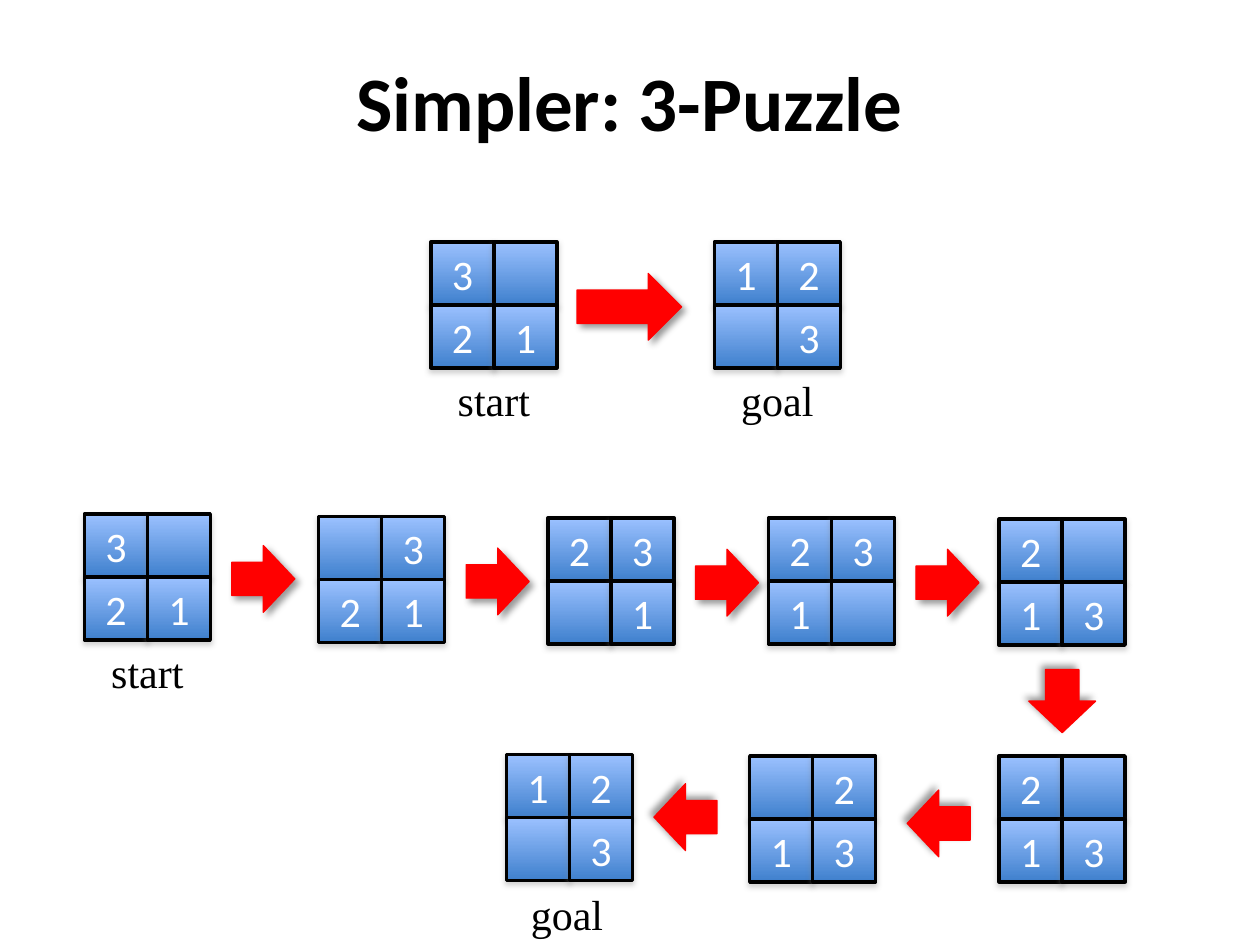
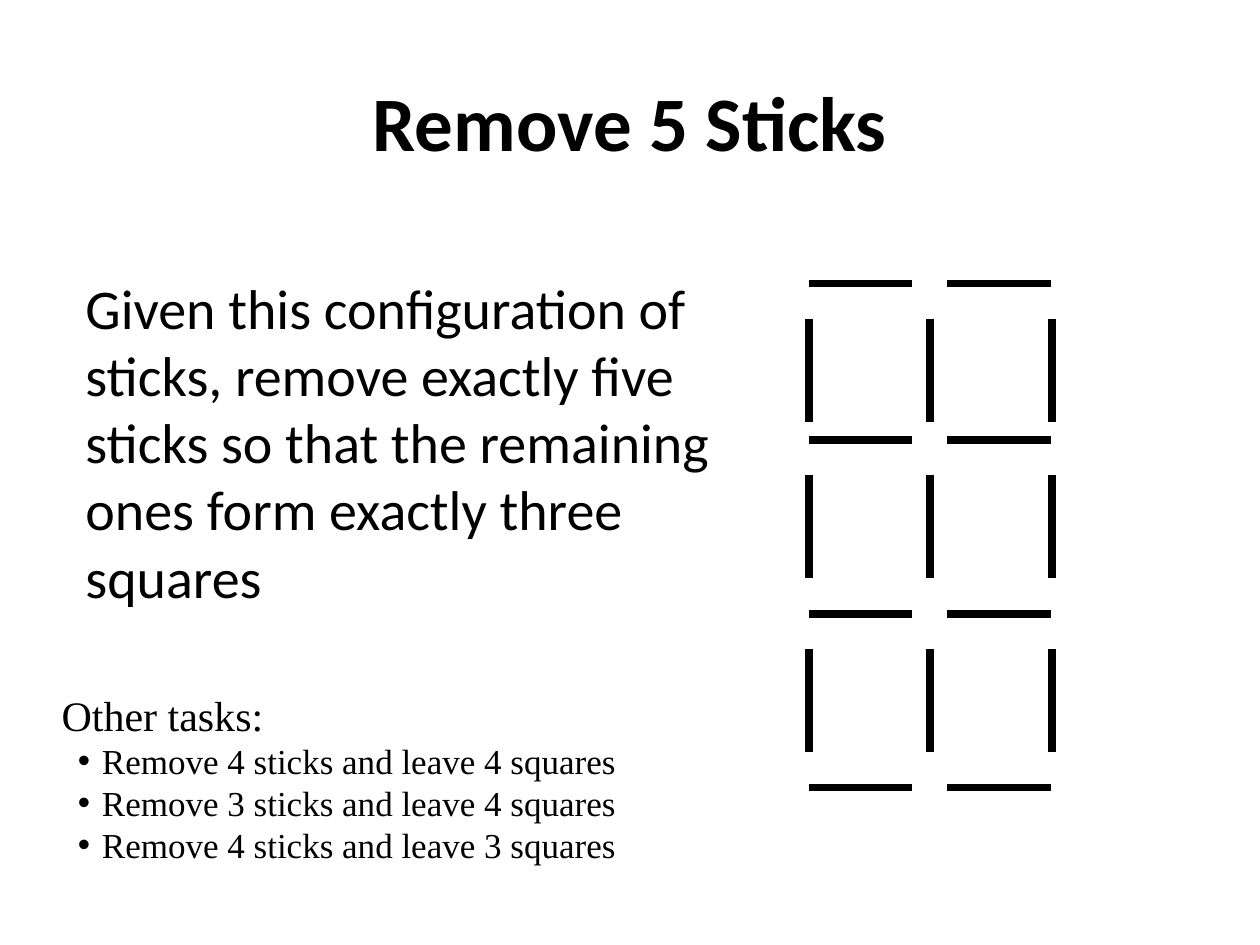
from itertools import product

from pptx import Presentation
from pptx.dml.color import RGBColor
from pptx.enum.shapes import MSO_CONNECTOR, MSO_SHAPE
from pptx.enum.text import MSO_ANCHOR, MSO_AUTO_SIZE, PP_ALIGN
from pptx.oxml.ns import qn
from pptx.util import Pt
from lxml.etree import SubElement

PX = 9144  # EMU; 100 px to the inch
BLACK = RGBColor(0x00, 0x00, 0x00)
WHITE = RGBColor(0xFF, 0xFF, 0xFF)
RED = RGBColor(0xFF, 0x00, 0x00)
GRAY = RGBColor(0x80, 0x80, 0x80)
TILE_TOP = RGBColor(0x9B, 0xC1, 0xFF)
TILE_BOTTOM = RGBColor(0x3F, 0x80, 0xCD)
SANS, SERIF = "Calibri", "Times New Roman"
TILE = 50
BOARD = 2 * TILE
STICK = 82


def px(*lengths):
    return [length * PX for length in lengths]


def style(paragraph, size, font, color=BLACK, bold=False, align=PP_ALIGN.LEFT):
    paragraph.alignment = align
    for run in paragraph.runs:
        run.font.size = Pt(size)
        run.font.name = font
        run.font.bold = bold
        run.font.color.rgb = color


def cast_shadow(shape, color, opacity, blur, distance, angle):
    """Give the shape an outer shadow; blur and distance are in points."""
    shape.shadow.inherit = False
    effects = shape.element.spPr.find(qn("a:effectLst"))
    outer = SubElement(effects, qn("a:outerShdw"), blurRad=str(Pt(blur)),
                       dist=str(Pt(distance)), dir=str(angle * 60000),
                       rotWithShape="0")
    tint = SubElement(outer, qn("a:srgbClr"), val=str(color))
    SubElement(tint, qn("a:alpha"), val=str(opacity * 1000))


def add_bullet(paragraph, margin, indent):
    properties = paragraph._p.get_or_add_pPr()
    properties.set("marL", str(margin * PX))
    properties.set("indent", str(indent * PX))
    SubElement(properties, qn("a:buFont"), typeface="Arial")
    SubElement(properties, qn("a:buChar"), char="•")


class Deck:
    def __init__(self):
        self.presentation = Presentation()
        self.presentation.slide_width, self.presentation.slide_height = px(1000, 750)
        self.slide = None

    def new_slide(self, title, title_top):
        layout = self.presentation.slide_layouts[6]
        self.slide = self.presentation.slides.add_slide(layout)
        frame = self.text(title, 75, title_top, 850, 125, 44, SANS,
                          bold=True, align=PP_ALIGN.CENTER)
        frame.vertical_anchor = MSO_ANCHOR.MIDDLE

    def text(self, words, left, top, width, height, size, font, **look):
        box = self.slide.shapes.add_textbox(*px(left, top, width, height))
        frame = box.text_frame
        frame.word_wrap = True
        frame.text = words
        style(frame.paragraphs[0], size, font, **look)
        return frame

    def caption(self, words, left, top):
        self.text(words, left, top, BOARD, 50, 24, SERIF, align=PP_ALIGN.CENTER)

    def board(self, digits, left, top):
        """Draw a 2 by 2 puzzle; digits run row by row, a space is the gap."""
        group = self.slide.shapes.add_group_shape()
        for (row, column), digit in zip(product(range(2), repeat=2), digits):
            tile = group.shapes.add_shape(
                MSO_SHAPE.RECTANGLE,
                *px(left + column * TILE, top + row * TILE, TILE, TILE))
            tile.fill.gradient()
            tile.fill.gradient_angle = 270
            for stop, color in zip(tile.fill.gradient_stops, (TILE_TOP, TILE_BOTTOM)):
                stop.color.rgb = color
            tile.line.color.rgb = BLACK
            tile.line.width = Pt(2)
            cast_shadow(tile, GRAY, 35, 3.1, 1.8, 90)
            tile.text_frame.vertical_anchor = MSO_ANCHOR.MIDDLE
            tile.text_frame.text = digit.strip()
            style(tile.text_frame.paragraphs[0], 24, SANS, WHITE, align=PP_ALIGN.CENTER)

    def arrow(self, left, top, width=50, turn=0):
        arrow = self.slide.shapes.add_shape(
            MSO_SHAPE.RIGHT_ARROW, *px(left, top, width, 53))
        arrow.rotation = turn
        arrow.fill.solid()
        arrow.fill.fore_color.rgb = RED
        arrow.line.color.rgb = RED
        arrow.line.width = Pt(0.75)
        cast_shadow(arrow, BLACK, 40, 4, 3, 225 if turn else 45)

    def stick(self, left, top, across=0, down=0):
        stick = self.slide.shapes.add_connector(
            MSO_CONNECTOR.STRAIGHT, *px(left, top, left + across, top + down))
        stick.line.color.rgb = BLACK
        stick.line.width = Pt(4.5)
        SubElement(stick.element.spPr, qn("a:effectLst"))


def puzzle_slide(deck):
    deck.new_slide("Simpler: 3-Puzzle", 17)
    boards = [
        ("3 21", 342, 192), ("12 3", 567, 192),
        ("3 21", 67, 408), (" 321", 253, 410), ("23 1", 435, 411),
        ("231 ", 610, 411), ("2 13", 793, 412),
        ("2 13", 793, 600), (" 213", 595, 600), ("12 3", 402, 599),
    ]
    for digits, left, top in boards:
        deck.board(digits, left, top)

    deck.arrow(458, 217, width=83)
    for _, left, top in boards[2:6]:
        deck.arrow(left + BOARD + 17, top + 25)
    deck.arrow(818, 530, turn=90)
    for left, top in ((720, 627), (519, 622)):
        deck.arrow(left, top, turn=180)

    for words, left, top in (("start", 342, 292), ("goal", 567, 292),
                             ("start", 67, 508), ("goal", 400, 700)):
        deck.caption(words, left, top)


def sticks_slide(deck):
    deck.new_slide("Remove 5 Sticks", 33)
    task = deck.text(
        "Given this configuration of sticks, remove exactly five sticks "
        "so that the remaining ones form exactly three squares",
        58, 212, 517, 304, 32, SANS)
    task.paragraphs[0].space_before = Pt(6.4)

    rows = (225, 349, 487, 625)
    for top, left in product(rows, (642, 752)):
        deck.stick(left, top, across=STICK)
    for top, left in product(rows[:-1], (642, 738, 835)):
        deck.stick(left, top + 28, down=STICK)

    others = deck.text("Other tasks:", 39, 542, 462, 151, 24, SERIF)
    others.word_wrap = False
    others.auto_size = MSO_AUTO_SIZE.SHAPE_TO_FIT_TEXT
    for removed, left_over in ((4, 4), (3, 4), (4, 3)):
        item = others.add_paragraph()
        item.text = f"Remove {removed} sticks and leave {left_over} squares"
        style(item, 20, SERIF)
        add_bullet(item, 32, -19)


def main():
    deck = Deck()
    puzzle_slide(deck)
    sticks_slide(deck)
    deck.presentation.save("out.pptx")


if __name__ == "__main__":
    main()
